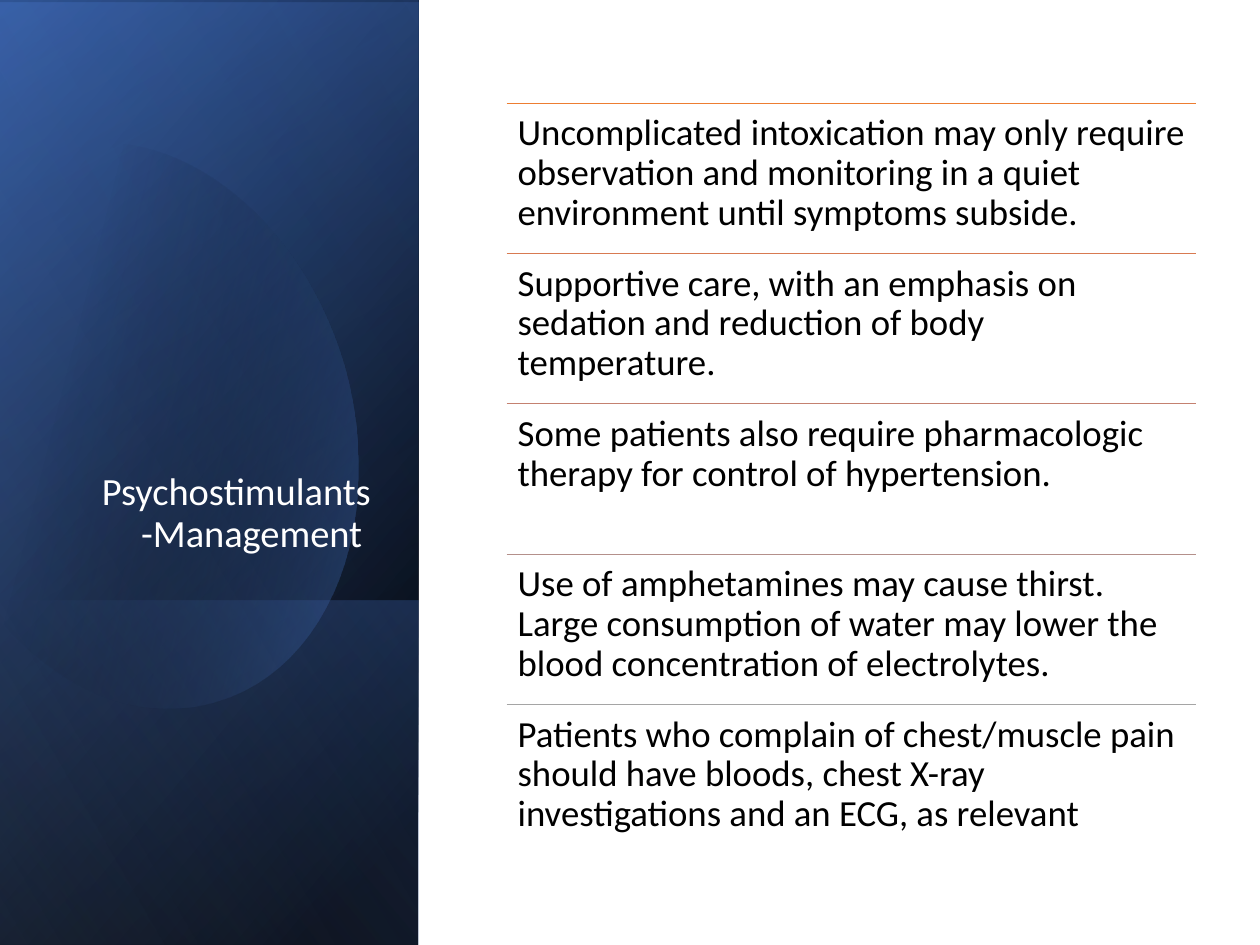
from pptx import Presentation
from pptx.dml.color import RGBColor
from pptx.enum.shapes import MSO_CONNECTOR, MSO_SHAPE
from pptx.enum.text import MSO_ANCHOR, PP_ALIGN
from pptx.oxml.ns import qn
from pptx.util import Pt
from lxml import etree

RECTANGLE = MSO_SHAPE.RECTANGLE
STRAIGHT = MSO_CONNECTOR.STRAIGHT
TOP, BOTTOM = MSO_ANCHOR.TOP, MSO_ANCHOR.BOTTOM
LEFT, RIGHT = PP_ALIGN.LEFT, PP_ALIGN.RIGHT

BLACK = RGBColor(0x00, 0x00, 0x00)
WHITE = RGBColor(0xFF, 0xFF, 0xFF)
BLUE = RGBColor(0x44, 0x72, 0xC4)
DARK_BLUE = RGBColor(0x2F, 0x55, 0x97)
LIGHT_BLUE = RGBColor(0x8F, 0xAA, 0xDC)
ORANGE = RGBColor(0xED, 0x7D, 0x31)
COPPER = RGBColor(0xD8, 0x7A, 0x51)
ROSE = RGBColor(0xC4, 0x81, 0x70)
TAUPE = RGBColor(0xB4, 0x90, 0x8B)
GRAY = RGBColor(0xA5, 0xA5, 0xA5)


def add_text(page, text, left, top, width, height, size, color,
             align=LEFT, anchor=TOP, inset_x=7.2, inset_y=3.6, after=0):
    box = page.shapes.add_textbox(Pt(left), Pt(top), Pt(width), Pt(height))
    frame = box.text_frame
    frame.word_wrap = True
    frame.vertical_anchor = anchor
    frame.margin_left = frame.margin_right = Pt(inset_x)
    frame.margin_top = frame.margin_bottom = Pt(inset_y)
    para = frame.paragraphs[0]
    para.alignment = align
    para.line_spacing = 0.9
    para.space_after = Pt(after)
    span = para.add_run()
    span.text = text
    span.font.name = "Calibri"
    span.font.size = Pt(size)
    span.font.color.rgb = color


def paint_gradient(shape, angle, stops):
    """Fill with (position %, colour, opacity %) stops, angle clockwise."""
    shape.shadow.inherit = False
    shape.line.fill.background()
    shape.fill.gradient()
    shape.fill.gradient_angle = 360 - angle
    for stop, (position, color, _) in zip(shape.fill.gradient_stops, stops):
        stop.position = position / 100
        stop.color.rgb = color
    colors = shape._element.spPr.iter(qn("a:srgbClr"))
    for node, (_, _, opacity) in zip(list(colors), stops):
        if opacity < 100:
            etree.SubElement(node, qn("a:alpha"), val=str(opacity * 1000))


deck = Presentation()
deck.slide_width, deck.slide_height = Pt(720), Pt(540)
page = deck.slides.add_slide(deck.slide_layouts[6])

# Side panel layers: length along the page, vertical centre, angle, stops
PANEL = 239
base = (540, 270, 50, [(8, BLACK, 100), (100, DARK_BLUE, 100)])
glow = (540, 271.5, 30, [(0, BLACK, 0), (99, BLUE, 46)])
foot = (197, 441.5, 130, [(2, BLUE, 29), (100, BLACK, 30)])
sheen = (540, 270, 120, [(0, BLACK, 0), (99, LIGHT_BLUE, 11)])

for layer in (base, glow, foot, "oval", sheen):
    if layer == "oval":
        # Tilted oval, its curves sampled from cubic segments in inches
        start = (0.96, 1.14)
        segments = [
            [(1.71, 1.22), (2.44, 1.92), (2.73, 2.9)],
            [(3.07, 4.12), (2.62, 5.31), (1.71, 5.57)],
            [(1.14, 5.74), (0.53, 5.5), (0.07, 5)],
            [(-0.03, 4.88)],
            [(-0.25, 1.66)],
            [(-0.15, 1.54)],
            [(0.02, 1.37), (0.22, 1.25), (0.45, 1.18)],
            [(0.62, 1.13), (0.79, 1.12), (0.96, 1.14)],
        ]
        points = [start]
        for segment in segments:
            if len(segment) == 1:
                points += segment
                continue
            corners = [points[-1]] + segment
            for step in range(1, 25):
                t = step / 24
                weights = ((1 - t) ** 3, 3 * t * (1 - t) ** 2,
                           3 * t * t * (1 - t), t ** 3)
                points.append(tuple(
                    sum(w * corner[axis] for w, corner in zip(weights, corners))
                    for axis in (0, 1)))
        outline = [(Pt(x * 72), Pt(y * 72)) for x, y in points]
        builder = page.shapes.build_freeform(*outline[0])
        builder.add_line_segments(outline[1:], close=True)
        paint_gradient(builder.convert_to_shape(), 14,
                       [(29, BLACK, 0), (100, BLUE, 43)])
        continue
    length, centre, angle, stops = layer
    rect = page.shapes.add_shape(RECTANGLE, Pt((PANEL - length) / 2),
                                 Pt(centre - PANEL / 2), Pt(length), Pt(PANEL))
    rect.rotation = 90
    rect._element.spPr.xfrm.set("flipH", "1")
    paint_gradient(rect, angle, stops)

# Title
add_text(page, "Psychostimulants -Management ", 34.5, 132.5, 184.5, 188.5,
         size=22, color=WHITE, align=RIGHT, anchor=BOTTOM)

# Management points, each under a rule
ROW_LEFT, ROW_TOP, ROW_WIDTH, ROW_HEIGHT = 289.5, 59, 394, 85.9
rows = [
    (ORANGE, "Uncomplicated intoxication may only require observation and "
             "monitoring in a quiet environment until symptoms subside."),
    (COPPER, "Supportive care, with an emphasis on sedation and reduction "
             "of body temperature."),
    (ROSE, "Some patients also require pharmacologic therapy for control "
           "of hypertension."),
    (TAUPE, "Use of amphetamines may cause thirst. Large consumption of "
            "water may lower the blood concentration of electrolytes."),
    (GRAY, "Patients who complain of chest/muscle pain should have bloods, "
           "chest X-ray investigations and an ECG, as relevant"),
]
for index, (color, text) in enumerate(rows):
    top = ROW_TOP + index * ROW_HEIGHT
    rule = page.shapes.add_connector(STRAIGHT, Pt(ROW_LEFT), Pt(top),
                                     Pt(ROW_LEFT + ROW_WIDTH), Pt(top))
    rule.line.color.rgb = color
    rule.line.width = Pt(0.5)
    etree.SubElement(rule._element.spPr, qn("a:effectLst"))
    add_text(page, text, ROW_LEFT, top, ROW_WIDTH, ROW_HEIGHT, size=21,
             color=BLACK, inset_x=6.3, inset_y=6.3, after=7.35)

deck.save("out.pptx")
